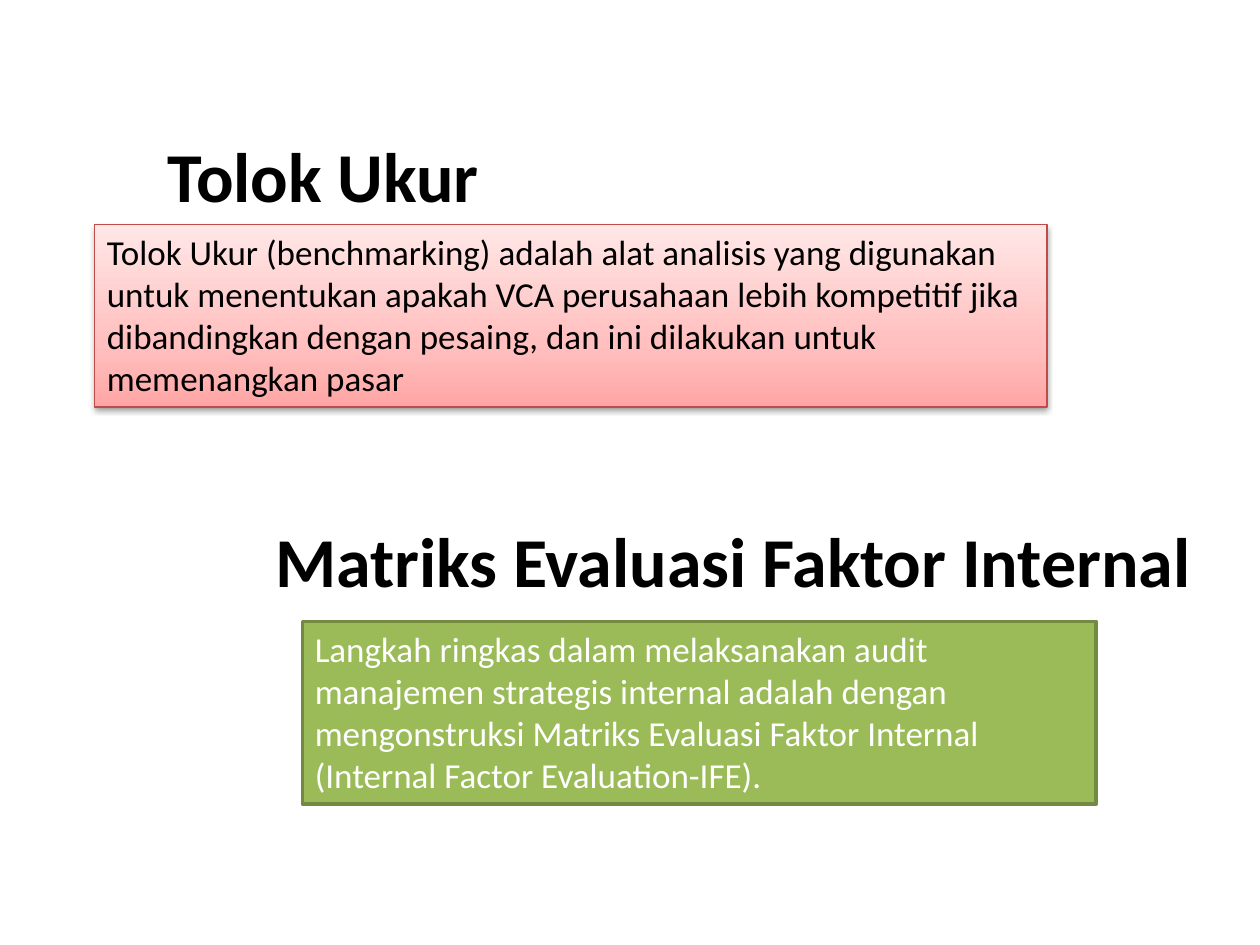
from copy import deepcopy
from dataclasses import dataclass

from lxml import etree
from pptx import Presentation
from pptx.dml.color import RGBColor
from pptx.enum.shapes import MSO_SHAPE
from pptx.enum.text import MSO_ANCHOR, MSO_AUTO_SIZE, PP_ALIGN
from pptx.oxml.ns import qn
from pptx.util import Pt

RECTANGLE = MSO_SHAPE.RECTANGLE
TOP, MIDDLE = MSO_ANCHOR.TOP, MSO_ANCHOR.MIDDLE
LEFT, CENTER = PP_ALIGN.LEFT, PP_ALIGN.CENTER
FIT_SHAPE, NO_FIT = MSO_AUTO_SIZE.SHAPE_TO_FIT_TEXT, MSO_AUTO_SIZE.NONE
TITLE_ONLY = 5


@dataclass(frozen=True)
class Theme:
    font: str = "Calibri"
    heading_size: int = 40
    body_size: int = 20
    dark: str = "000000"
    light: str = "FFFFFF"
    green: str = "9BBB59"
    green_line: str = "738A42"
    red_line: str = "BF4C48"
    red_stops: tuple = ((0, "FFA6A5"), (0.35, "FFC0BF"), (1, "FFE7E7"))


THEME = Theme()


def rgb(color):
    return RGBColor.from_string(color)


def write(shape, text, size, color, bold=False, align=LEFT, **frame_format):
    frame = shape.text_frame
    settings = {"word_wrap": True, "auto_size": FIT_SHAPE, "vertical_anchor": TOP}
    for name, value in (settings | frame_format).items():
        setattr(frame, name, value)
    paragraph = frame.paragraphs[0]
    paragraph.alignment = align
    run = paragraph.add_run()
    run.text = text
    font_format = {"name": THEME.font, "size": Pt(size), "bold": bold}
    for name, value in font_format.items():
        setattr(run.font, name, value)
    run.font.color.rgb = rgb(color)


def add_title(slide, box, text):
    title = slide.shapes.title
    for name, value in zip(("left", "top", "width", "height"), box):
        setattr(title, name, Pt(value))
    write(title, text, THEME.heading_size, THEME.dark, bold=True, align=CENTER,
          vertical_anchor=MIDDLE, auto_size=NO_FIT)


def add_heading(slide, box, text):
    heading = slide.shapes.add_textbox(*map(Pt, box))
    write(heading, text, THEME.heading_size, THEME.dark, bold=True, word_wrap=False)


def add_panel(slide, box, text, text_color, line_color, line_width):
    panel = slide.shapes.add_shape(RECTANGLE, *map(Pt, box))
    panel.shadow.inherit = False
    panel.line.color.rgb = rgb(line_color)
    panel.line.width = Pt(line_width)
    write(panel, text, THEME.body_size, text_color)
    return panel


def fill_gradient(shape, stops, angle):
    shape.fill.gradient()
    shape.fill.gradient_angle = angle
    # A new gradient has two stops, so the middle one is added
    stop_list = shape.fill._fill._gradFill.find(qn("a:gsLst"))
    stop_list.insert(1, deepcopy(stop_list[0]))
    for stop, (position, color) in zip(shape.fill.gradient_stops, stops):
        stop.position = position
        stop.color.rgb = rgb(color)


def add_soft_shadow(shape, blur, distance, opacity):
    effects = shape._element.spPr.find(qn("a:effectLst"))
    shadow = etree.SubElement(
        effects, qn("a:outerShdw"), blurRad=str(Pt(blur)), dist=str(Pt(distance)),
        dir=str(90 * 60000), rotWithShape="0")
    color = etree.SubElement(shadow, qn("a:srgbClr"), val=THEME.dark)
    etree.SubElement(color, qn("a:alpha"), val=str(opacity * 1000))


def main():
    presentation = Presentation()
    presentation.slide_width, presentation.slide_height = Pt(720), Pt(540)
    slide = presentation.slides.add_slide(presentation.slide_layouts[TITLE_ONLY])

    # Benchmarking title
    add_title(slide, (0, 54.7, 369.4, 90), "Tolok Ukur")

    # Internal factor evaluation
    evaluation = add_panel(
        slide, (172.8, 355, 453.6, 104.4),
        "Langkah ringkas dalam melaksanakan audit manajemen strategis internal "
        "adalah dengan mengonstruksi Matriks Evaluasi Faktor Internal "
        "(Internal Factor Evaluation-IFE).",
        THEME.light, THEME.green_line, 2)
    evaluation.fill.solid()
    evaluation.fill.fore_color.rgb = rgb(THEME.green)
    add_heading(slide, (150.5, 292.3, 543.6, 55.4), "Matriks Evaluasi Faktor Internal")

    # Benchmarking definition
    benchmarking = add_panel(
        slide, (54, 128.2, 544.3, 104.4),
        "Tolok Ukur (benchmarking) adalah alat analisis yang digunakan untuk "
        "menentukan apakah VCA perusahaan lebih kompetitif jika dibandingkan "
        "dengan pesaing, dan ini dilakukan untuk memenangkan pasar",
        THEME.dark, THEME.red_line, 0.75)
    fill_gradient(benchmarking, THEME.red_stops, 90)
    add_soft_shadow(benchmarking, blur=3.1, distance=1.6, opacity=38)

    presentation.save("out.pptx")


if __name__ == "__main__":
    main()
